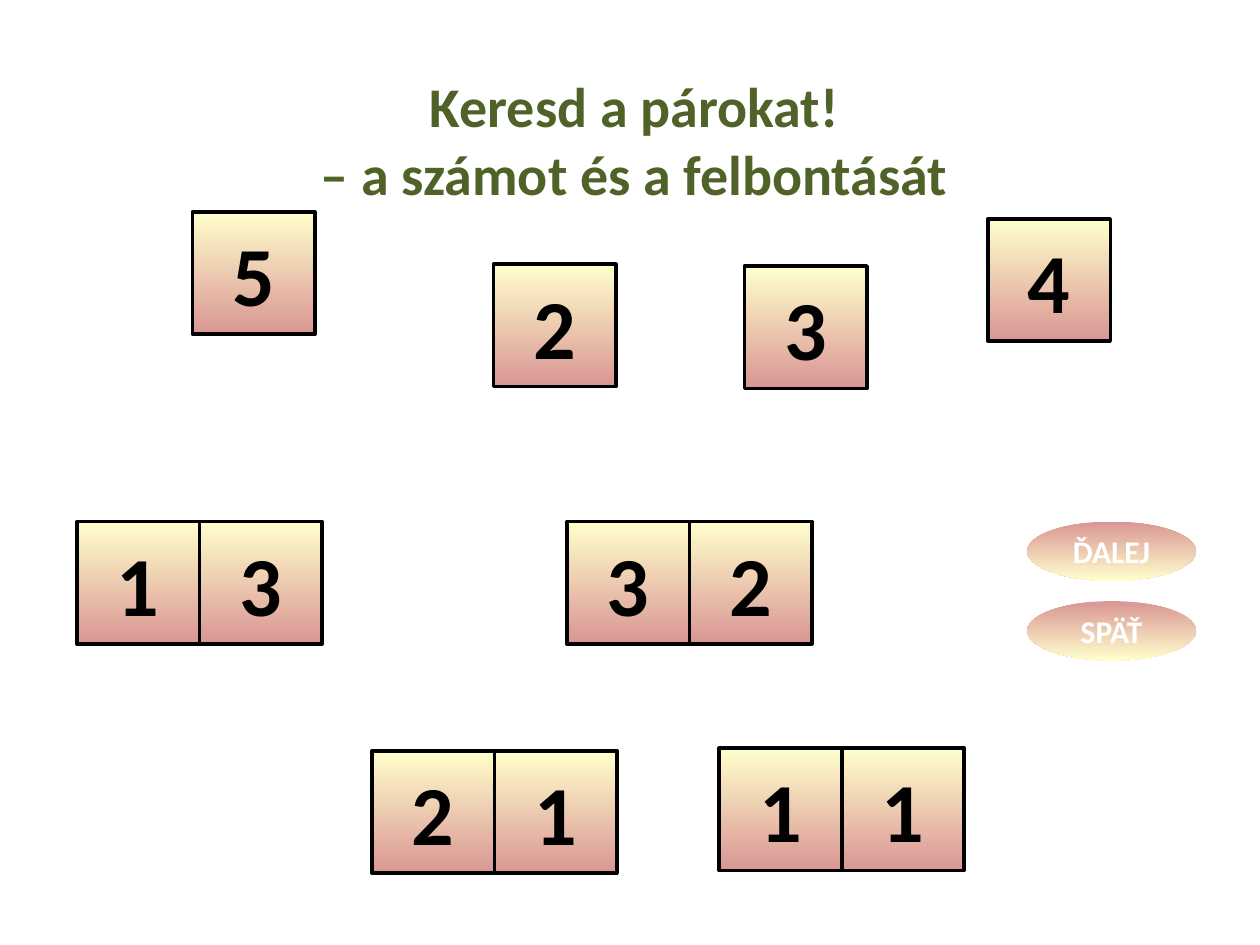
from pptx import Presentation
from pptx.dml.color import RGBColor
from pptx.enum.shapes import MSO_SHAPE
from pptx.enum.text import MSO_ANCHOR, MSO_AUTO_SIZE, PP_ALIGN
from pptx.util import Pt

COLORS = {"cream": "FFFFCC", "rose": "D99694", "green": "4F6228",
          "black": "000000", "white": "FFFFFF"}
TILE = 70


def format_text(tf, size, color, anchor):
    tf.word_wrap = True
    tf.auto_size = MSO_AUTO_SIZE.NONE
    tf.vertical_anchor = anchor
    p = tf.paragraphs[0]
    p.alignment = PP_ALIGN.CENTER
    for r in p.runs:
        r.font.name = "Calibri"
        r.font.size = Pt(size)
        r.font.bold = True
        r.font.color.rgb = RGBColor.from_string(COLORS[color])


def add_gradient_shape(kind, x, y, w, h, text, top, bottom):
    """Add a shape shaded from its top colour down to its bottom colour."""
    sp = s.shapes.add_shape(kind, Pt(x), Pt(y), Pt(w), Pt(h))
    sp.shadow.inherit = False
    sp.fill.gradient()
    sp.fill.gradient_angle = 270
    for stop, color in zip(sp.fill.gradient_stops, (top, bottom)):
        stop.color.rgb = RGBColor.from_string(COLORS[color])
    sp.text_frame.text = text
    return sp


prs = Presentation()
prs.slide_width, prs.slide_height = Pt(720), Pt(540)
s = prs.slides.add_slide(prs.slide_layouts[5])

# Navigation buttons
for label, y in (("SPÄŤ", 343.5), ("ĎALEJ", 298)):
    sp = add_gradient_shape(MSO_SHAPE.OVAL, 587, y, 96.5, 34, label, "rose", "cream")
    sp.line.fill.background()
    format_text(sp.text_frame, 18, "white", MSO_ANCHOR.MIDDLE)

# Title
title = s.shapes.title
title.left, title.top, title.width, title.height = Pt(36), Pt(37.5), Pt(653), Pt(74)
title.text_frame.text = "Keresd a párokat!\v– a számot és a felbontását"
format_text(title.text_frame, 32, "green", MSO_ANCHOR.TOP)

# Numbers on single tiles, their decompositions on two joined tiles
groups = [
    ("5", 110, 121), ("2", 282, 151), ("3", 425.5, 152), ("4", 564.5, 125),
    ("13", 44, 298), ("32", 324, 298), ("21", 212.5, 429), ("11", 411, 427.5),
]
for digits, x, y in groups:
    for i, digit in enumerate(digits):
        sp = add_gradient_shape(MSO_SHAPE.RECTANGLE, x + i * TILE, y, TILE, TILE,
                                digit, "cream", "rose")
        sp.line.color.rgb = RGBColor.from_string(COLORS["black"])
        sp.line.width = Pt(2)
        format_text(sp.text_frame, 48, "black", MSO_ANCHOR.MIDDLE)

prs.save("out.pptx")
